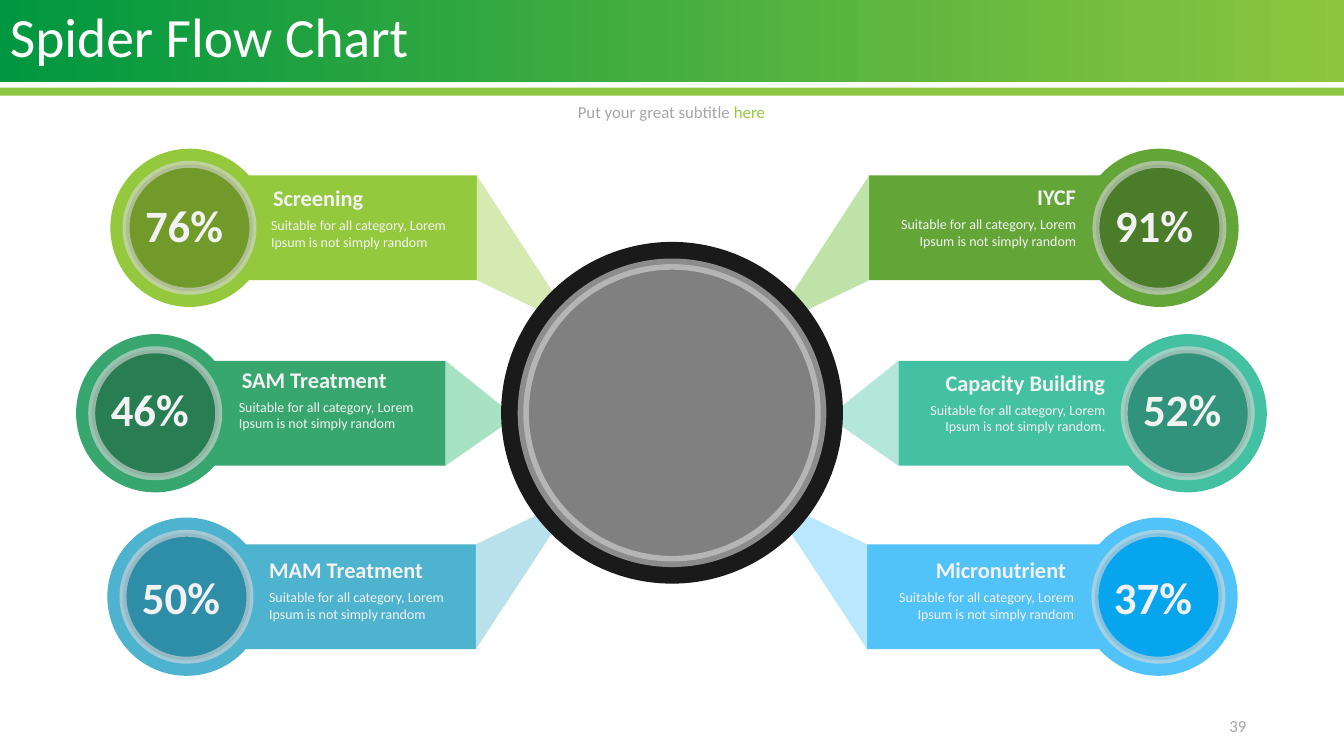
from copy import deepcopy
from dataclasses import dataclass

from lxml import etree
from pptx import Presentation
from pptx.dml.color import RGBColor
from pptx.enum.shapes import MSO_SHAPE
from pptx.enum.text import MSO_ANCHOR, MSO_AUTO_SIZE, PP_ALIGN
from pptx.oxml.ns import qn
from pptx.util import Inches, Pt

RECTANGLE, OVAL = MSO_SHAPE.RECTANGLE, MSO_SHAPE.OVAL
LEFT, CENTER, RIGHT = PP_ALIGN.LEFT, PP_ALIGN.CENTER, PP_ALIGN.RIGHT
TOP, MIDDLE = MSO_ANCHOR.TOP, MSO_ANCHOR.MIDDLE
GROW = MSO_AUTO_SIZE.SHAPE_TO_FIT_TEXT

WHITE = RGBColor(0xFF, 0xFF, 0xFF)
PALE = RGBColor(0xF2, 0xF2, 0xF2)
SILVER = RGBColor(0xD9, 0xD9, 0xD9)
MUTED = RGBColor(0xA6, 0xA6, 0xA6)
GRAY = RGBColor(0x80, 0x80, 0x80)
INK = RGBColor(0x1A, 0x1A, 0x1A)
DEEP_GREEN = RGBColor(0x00, 0x97, 0x40)
MID_GREEN = RGBColor(0x78, 0xBF, 0x3F)
BRIGHT_GREEN = RGBColor(0x8D, 0xC6, 0x3F)
LIME, LIME_DARK, LIME_PALE = (
    RGBColor(0x95, 0xC9, 0x3D), RGBColor(0x71, 0x9A, 0x2B), RGBColor(0xD5, 0xE9, 0xB1))
LEAF, LEAF_DARK, LEAF_PALE = (
    RGBColor(0x63, 0xA5, 0x37), RGBColor(0x4A, 0x7C, 0x29), RGBColor(0xBF, 0xE2, 0xA8))
JADE, JADE_DARK, JADE_PALE = (
    RGBColor(0x37, 0xA7, 0x6F), RGBColor(0x29, 0x7D, 0x53), RGBColor(0xA8, 0xE2, 0xC5))
MINT, MINT_DARK, MINT_PALE = (
    RGBColor(0x44, 0xC1, 0xA3), RGBColor(0x31, 0x93, 0x7B), RGBColor(0xB4, 0xE6, 0xDA))
TEAL, TEAL_DARK, TEAL_PALE = (
    RGBColor(0x4E, 0xB3, 0xCF), RGBColor(0x2E, 0x8E, 0xA8), RGBColor(0xB8, 0xE1, 0xEC))
SKY, SKY_DARK, SKY_PALE = (
    RGBColor(0x51, 0xC3, 0xF9), RGBColor(0x08, 0xA5, 0xEF), RGBColor(0xB9, 0xE7, 0xFD))

COLUMNS, ROWS = 13.33, 7.5
BAR_WIDTH, BAR_HEIGHT = 2.3, 1.04
DISC, DISC_CORE = 1.57, 1.26
HUB_X, HUB_Y, HUB, HUB_CORE = 6.665, 4.095, 3.39, 2.95
BLURB = "Suitable for all category, Lorem Ipsum is not simply random"

HEADING = {"size": Pt(16), "bold": True}
BODY = {"size": Pt(10)}
VALUE = {"size": Pt(32), "bold": True}
NOTE = {"size": Pt(12)}
TITLE = {"size": Pt(39.6)}


@dataclass
class Card:
    row: int
    side: int
    value: str
    heading: str
    colors: tuple
    inner_edge: float
    disc_x: float
    text_left: float
    text_top: float
    heading_shift: float = 0
    blurb: str = BLURB


@dataclass
class CardRow:
    center: float
    value_top: float
    beam: tuple


CARD_ROWS = (
    CardRow(2.26, 1.91, ((0, -0.52), (0.84, 0.77), (0.73, 0.87), (0, 0.52))),
    CardRow(4.1, 3.74, ((0, -0.52), (0.56, -0.07), (0.56, 0.13), (0, 0.52))),
    CardRow(5.92, 5.6, ((0, 0.52), (0.84, -0.76), (0.73, -0.87), (0, -0.52))),
)

CARDS = (
    Card(0, 1, "76%", "Screening", (LIME, LIME_DARK, LIME_PALE),
         4.73, 1.88, 2.59, 2.1, 0.02),
    Card(0, -1, "91%", "IYCF", (LEAF, LEAF_DARK, LEAF_PALE),
         8.62, 11.5, 8.75, 2.09),
    Card(1, 1, "46%", "SAM Treatment", (JADE, JADE_DARK, JADE_PALE),
         4.42, 1.54, 2.27, 3.9, 0.03),
    Card(1, -1, "52%", "Capacity Building", (MINT, MINT_DARK, MINT_PALE),
         8.91, 11.78, 9.04, 3.93, blurb=BLURB + "."),
    Card(2, 1, "50%", "MAM Treatment", (TEAL, TEAL_DARK, TEAL_PALE),
         4.72, 1.85, 2.57, 5.79),
    Card(2, -1, "37%", "Micronutrient", (SKY, SKY_DARK, SKY_PALE),
         8.6, 11.49, 8.73, 5.79, -0.08),
)


class SlideBuilder:
    font_name = "Calibri"

    def __init__(self, deck):
        self.deck = deck
        self.slide = deck.slides.add_slide(deck.slide_layouts[6])

    def col(self, columns):
        return round(self.deck.slide_width * columns / COLUMNS)

    def row(self, rows):
        return round(self.deck.slide_height * rows / ROWS)

    def frame(self, left, top, width, height):
        return self.col(left), self.row(top), self.col(width), self.row(height)

    def paint(self, shape, color):
        shape.shadow.inherit = False
        shape.line.fill.background()
        shape.fill.solid()
        shape.fill.fore_color.rgb = color
        return shape

    def preset(self, kind, area, color):
        shape = self.slide.shapes.add_shape(kind, *self.frame(*area))
        return self.paint(shape, color)

    def disc(self, x, y, size, color):
        return self.preset(OVAL, (x - size / 2, y - size / 2, size, size), color)

    def ringed_disc(self, x, y, size, color, ring_width):
        line = self.disc(x, y, size, color).line
        line.color.rgb = SILVER
        line.width = Pt(ring_width)
        ring_color = line.fill._xPr.find(".//" + qn("a:srgbClr"))
        etree.SubElement(ring_color, qn("a:alpha"), val="60000")

    def gradient_band(self, area, stops):
        band = self.preset(RECTANGLE, area, stops[0][1])
        band.fill.gradient()
        band.fill.gradient_angle = 0
        stop_list = band._element.spPr.find(".//" + qn("a:gsLst"))
        stop_list.append(deepcopy(stop_list[0]))
        for stop, (position, color) in zip(band.fill.gradient_stops, stops):
            stop.position = position
            stop.color.rgb = color

    def outline(self, points, color):
        start, *rest = [(self.col(x), self.row(y)) for x, y in points]
        builder = self.slide.shapes.build_freeform(*start)
        builder.add_line_segments(rest, close=True)
        self.paint(builder.convert_to_shape(), color)

    def text(self, area, parts, style, align=LEFT, wrap=True, anchor=TOP, spacing=1.0):
        frame = self.slide.shapes.add_textbox(*self.frame(*area)).text_frame
        layout = {"word_wrap": wrap, "auto_size": GROW, "vertical_anchor": anchor}
        for key, setting in layout.items():
            setattr(frame, key, setting)
        paragraph = frame.paragraphs[0]
        paragraph.alignment = align
        paragraph.line_spacing = spacing
        for words, color in parts:
            run = paragraph.add_run()
            run.text = words
            for key, setting in {"name": self.font_name, **style}.items():
                setattr(run.font, key, setting)
            run.font.color.rgb = color

    def card(self, card):
        place = CARD_ROWS[card.row]
        main, dark, pale = card.colors
        bar_left = card.inner_edge - (BAR_WIDTH if card.side > 0 else 0)
        self.preset(RECTANGLE, (bar_left, place.center - BAR_HEIGHT / 2,
                                BAR_WIDTH, BAR_HEIGHT), main)
        self.outline([(card.inner_edge + card.side * dx, place.center + dy)
                      for dx, dy in place.beam], pale)
        self.disc(card.disc_x, place.center, DISC, main)
        self.ringed_disc(card.disc_x, place.center, DISC_CORE, dark, 5)
        align = LEFT if card.side > 0 else RIGHT
        self.text((card.text_left + card.heading_shift, card.text_top - 0.32, 2.02, 0.37),
                  [(card.heading, PALE)], HEADING, align)
        self.text((card.text_left, card.text_top, 2.02, 0.44),
                  [(card.blurb, PALE)], BODY, align)
        self.text((card.disc_x - 0.54, place.value_top, 0.99, 0.64),
                  [(card.value, PALE)], VALUE, wrap=False)


def main():
    deck = Presentation()
    deck.slide_width, deck.slide_height = Inches(COLUMNS), Inches(ROWS)
    page = SlideBuilder(deck)
    page.gradient_band((0, 0, COLUMNS, 0.81),
                       ((0, DEEP_GREEN), (0.85, MID_GREEN), (1, BRIGHT_GREEN)))
    page.preset(RECTANGLE, (0, 0.87, COLUMNS, 0.08), BRIGHT_GREEN)
    page.text((0, 0.04, 12.48, 0.71), [("Spider Flow Chart", WHITE)], TITLE,
              anchor=MIDDLE, spacing=0.9)
    page.text((5.61, 0.96, 2.1, 0.3),
              [("Put your great subtitle ", MUTED), ("here", LIME)], NOTE, CENTER, wrap=False)
    for card in CARDS:
        page.card(card)
    page.disc(HUB_X, HUB_Y, HUB, INK)
    page.ringed_disc(HUB_X, HUB_Y, HUB_CORE, GRAY, 8)
    page.text((11.02, 7.05, 1.44, 0.3), [("39", MUTED)], NOTE, RIGHT)
    deck.save("out.pptx")


if __name__ == "__main__":
    main()
